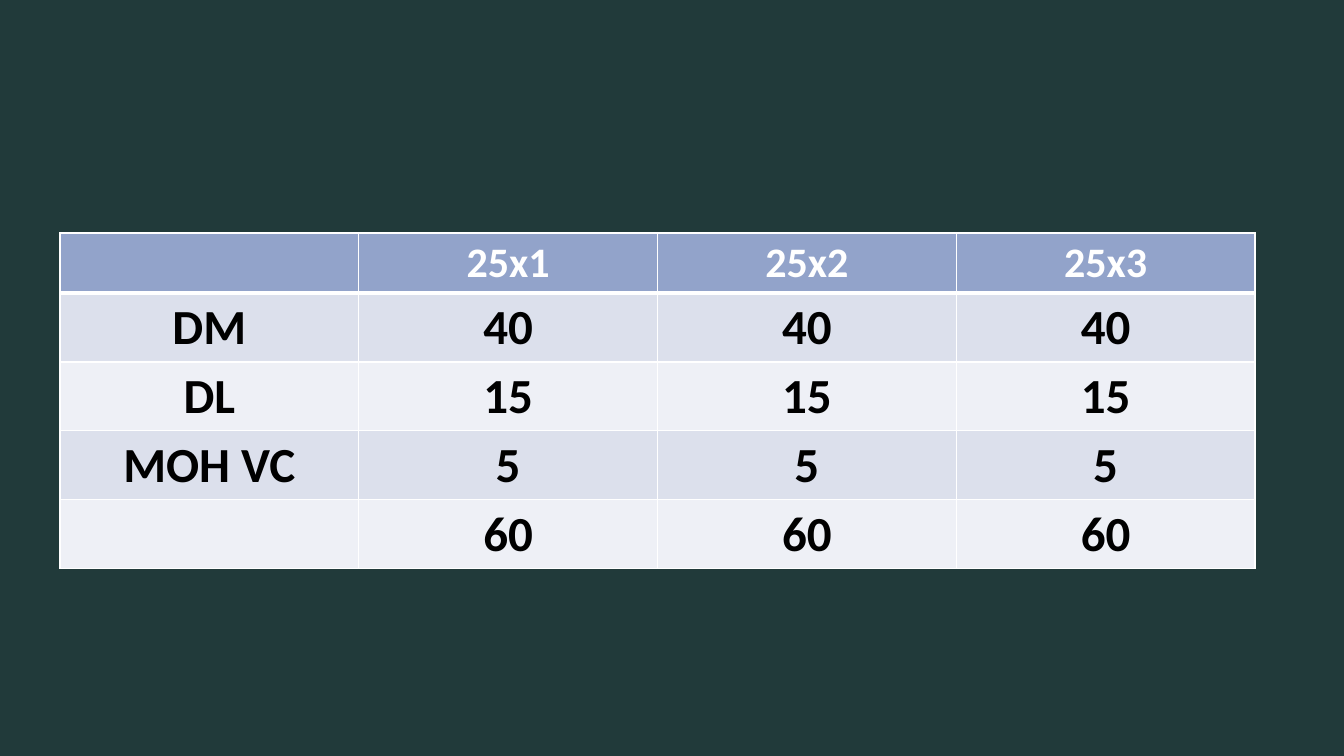
import dataclasses

import lxml.etree
import pptx
import pptx.dml.color
import pptx.enum.text
import pptx.oxml.ns
import pptx.util

EMU_PER_PX = 12192000 / 1344


@dataclasses.dataclass(frozen=True)
class Theme:
    background: str = "213A3A"
    header_fill: str = "92A3CA"
    band_fills: tuple = ("DCE0EC", "EEF0F6")
    header_text: str = "FFFFFF"
    body_text: str = "000000"
    grid: str = "FFFFFF"
    font: str = "Calibri"
    header_size: int = 30
    body_size: int = 35
    grid_width: int = 1
    header_rule_width: int = 3


THEME = Theme()

COSTS = (
    ("", "25x1", "25x2", "25x3"),
    ("DM", "40", "40", "40"),
    ("DL", "15", "15", "15"),
    ("MOH VC", "5", "5", "5"),
    ("", "60", "60", "60"),
)


def px(length):
    return pptx.util.Emu(round(length * EMU_PER_PX))


def rgb(color):
    return pptx.dml.color.RGBColor.from_string(color)


def set_borders(cell, top, bottom):
    """Draw the four grid lines; top and bottom are widths in points."""
    properties = cell._tc.get_or_add_tcPr()
    widths = {"a:lnL": THEME.grid_width, "a:lnR": THEME.grid_width,
              "a:lnT": top, "a:lnB": bottom}
    qn = pptx.oxml.ns.qn
    for position, (side, width) in enumerate(widths.items()):
        line = lxml.etree.Element(qn(side), w=str(pptx.util.Pt(width)))
        fill = lxml.etree.SubElement(line, qn("a:solidFill"))
        lxml.etree.SubElement(fill, qn("a:srgbClr"), val=THEME.grid)
        properties.insert(position, line)


def fill_cell(cell, text, fill, color, size):
    cell.fill.solid()
    cell.fill.fore_color.rgb = rgb(fill)
    cell.margin_top = cell.margin_bottom = px(4)
    cell.vertical_anchor = pptx.enum.text.MSO_ANCHOR.MIDDLE
    cell.text_frame.text = text
    paragraph = cell.text_frame.paragraphs[0]
    paragraph.alignment = pptx.enum.text.PP_ALIGN.CENTER
    for run in paragraph.runs:
        run.font.name = THEME.font
        run.font.size = pptx.util.Pt(size)
        run.font.bold = True
        run.font.color.rgb = rgb(color)


def add_cost_table(slide, left, top, width, height, header_height):
    row_count, column_count = len(COSTS), len(COSTS[0])
    table = slide.shapes.add_table(
        row_count, column_count, px(left), px(top), px(width), px(height)).table
    for column in table.columns:
        column.width = px(width / column_count)
    body_height = (height - header_height) / (row_count - 1)
    for index, values in enumerate(COSTS):
        is_header = index == 0
        table.rows[index].height = px(header_height if is_header else body_height)
        if is_header:
            style = (THEME.header_fill, THEME.header_text, THEME.header_size)
        else:
            band = THEME.band_fills[(index - 1) % 2]
            style = (band, THEME.body_text, THEME.body_size)
        top_width = THEME.header_rule_width if index == 1 else THEME.grid_width
        bottom_width = THEME.header_rule_width if is_header else THEME.grid_width
        for cell, value in zip(table.rows[index].cells, values):
            fill_cell(cell, value, *style)
            set_borders(cell, top_width, bottom_width)


def main():
    presentation = pptx.Presentation()
    presentation.slide_width = px(1344)
    presentation.slide_height = px(756)
    slide = presentation.slides.add_slide(presentation.slide_layouts[6])
    slide.background.fill.solid()
    slide.background.fill.fore_color.rgb = rgb(THEME.background)
    add_cost_table(slide, left=60, top=233, width=1195, height=336, header_height=60)
    presentation.save("out.pptx")


if __name__ == "__main__":
    main()
